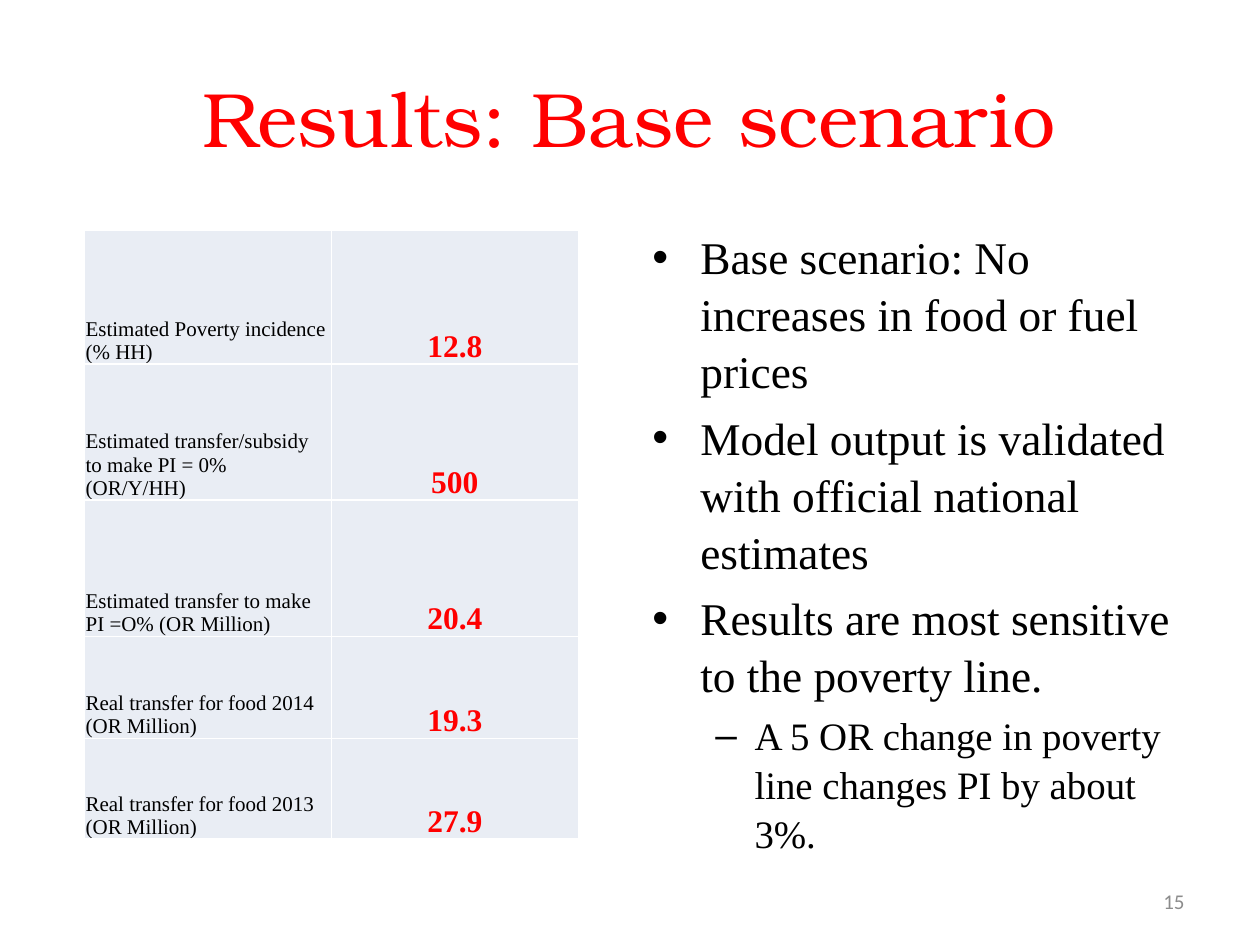
from typing import NamedTuple

from lxml import etree
from pptx import Presentation
from pptx.dml.color import RGBColor
from pptx.enum.text import MSO_ANCHOR, PP_ALIGN
from pptx.oxml.ns import qn
from pptx.util import Inches, Pt

RED = RGBColor(0xFF, 0x00, 0x00)
BLACK = RGBColor(0x00, 0x00, 0x00)
GRAY = RGBColor(0x8C, 0x8C, 0x8C)
CELL_FILL = RGBColor(0xE9, 0xED, 0xF4)
SERIF = "Times New Roman"
LEFT, CENTER, RIGHT = PP_ALIGN.LEFT, PP_ALIGN.CENTER, PP_ALIGN.RIGHT
TOP, MIDDLE, BOTTOM = MSO_ANCHOR.TOP, MSO_ANCHOR.MIDDLE, MSO_ANCHOR.BOTTOM


class Result(NamedTuple):
    label: str
    value: str
    height: float


class Bullet(NamedTuple):
    text: str
    level: int = 0


class BulletStyle(NamedTuple):
    char: str
    size: float
    margin: float
    hanging: float


RESULTS = [
    Result("Estimated Poverty incidence (% HH)", "12.8", 1.06),
    Result("Estimated transfer/subsidy to make PI = 0% (OR/Y/HH)", "500", 1.08),
    Result("Estimated transfer to make PI =O% (OR Million)", "20.4", 1.08),
    Result("Real transfer for food 2014 (OR Million)", "19.3", 0.81),
    Result("Real transfer for food 2013 (OR Million)", "27.9", 0.8),
]
BULLETS = [
    Bullet("Base scenario: No increases in food or fuel prices"),
    Bullet("Model output is validated with official national estimates"),
    Bullet("Results are most sensitive to the poverty line."),
    Bullet("A 5 OR change in poverty line changes PI by about 3%.", 1),
]
BULLET_STYLES = [
    BulletStyle("•", 25.9, 0.38, 0.38),
    BulletStyle("–", 22.2, 0.81, 0.31),
]


def write(p, text: str, *, size: float, font: str = SERIF,
          color: RGBColor = BLACK, bold: bool = False, align=LEFT) -> None:
    p.alignment = align
    r = p.add_run()
    r.text = text
    r.font.size = Pt(size)
    r.font.name = font
    r.font.bold = bold
    r.font.color.rgb = color


def add_box(slide, left: float, top: float, width: float, height: float,
            anchor=TOP):
    """Add a wrapping text box and return its text frame."""
    sp = slide.shapes.add_textbox(Inches(left), Inches(top),
                                  Inches(width), Inches(height))
    tf = sp.text_frame
    tf.word_wrap = True
    tf.vertical_anchor = anchor
    return tf


def set_bullet(p, style: BulletStyle) -> None:
    pPr = p._p.get_or_add_pPr()
    pPr.set("marL", str(Inches(style.margin)))
    pPr.set("indent", str(-Inches(style.hanging)))
    etree.SubElement(pPr, qn("a:buFont")).set("typeface", "Arial")
    etree.SubElement(pPr, qn("a:buChar")).set("char", style.char)


def add_bullets(slide) -> None:
    tf = add_box(slide, 5.08, 1.75, 4.42, 4.95)
    for i, bullet in enumerate(BULLETS):
        p = tf.add_paragraph() if i else tf.paragraphs[0]
        style = BULLET_STYLES[bullet.level]
        p.level = bullet.level
        p.line_spacing = 1.05
        p.space_before = Pt(round(style.size * 0.2, 1))
        set_bullet(p, style)
        write(p, bullet.text, size=style.size)


def set_borders(cell) -> None:
    """Give the cell thin white lines on all sides."""
    tcPr = cell._tc.get_or_add_tcPr()
    for i, side in enumerate(("lnL", "lnR", "lnT", "lnB")):
        ln = etree.Element(qn(f"a:{side}"), w=str(Pt(1)))
        fill = etree.SubElement(ln, qn("a:solidFill"))
        etree.SubElement(fill, qn("a:srgbClr")).set("val", "FFFFFF")
        tcPr.insert(i, ln)


def format_cell(cell) -> None:
    cell.fill.solid()
    cell.fill.fore_color.rgb = CELL_FILL
    cell.vertical_anchor = BOTTOM
    cell.margin_left = cell.margin_right = cell.margin_top = Inches(0.01)
    cell.margin_bottom = 0
    set_borders(cell)


def add_results_table(slide) -> None:
    height = sum(result.height for result in RESULTS)
    table = slide.shapes.add_table(len(RESULTS), 2, Inches(0.67), Inches(1.83),
                                   Inches(3.92), Inches(height)).table
    table.first_row = table.horz_banding = False
    for row, result in zip(table.rows, RESULTS):
        row.height = Inches(result.height)
        label, value = row.cells
        format_cell(label)
        format_cell(value)
        write(label.text_frame.paragraphs[0], result.label, size=12)
        write(value.text_frame.paragraphs[0], result.value, size=18,
              color=RED, bold=True, align=CENTER)


def main() -> None:
    prs = Presentation()
    prs.slide_width, prs.slide_height = Inches(10), Inches(7.5)
    slide = prs.slides.add_slide(prs.slide_layouts[6])

    title = add_box(slide, 0.5, 0.3, 9, 1.25, MIDDLE)
    write(title.paragraphs[0], "Results: Base scenario", size=44,
          font="TeX Gyre Bonum", color=RED, align=CENTER)
    add_bullets(slide)
    number = add_box(slide, 7.17, 6.95, 2.33, 0.4, MIDDLE)
    write(number.paragraphs[0], "15", size=12, font="Calibri",
          color=GRAY, align=RIGHT)
    add_results_table(slide)

    prs.save("out.pptx")


if __name__ == "__main__":
    main()
